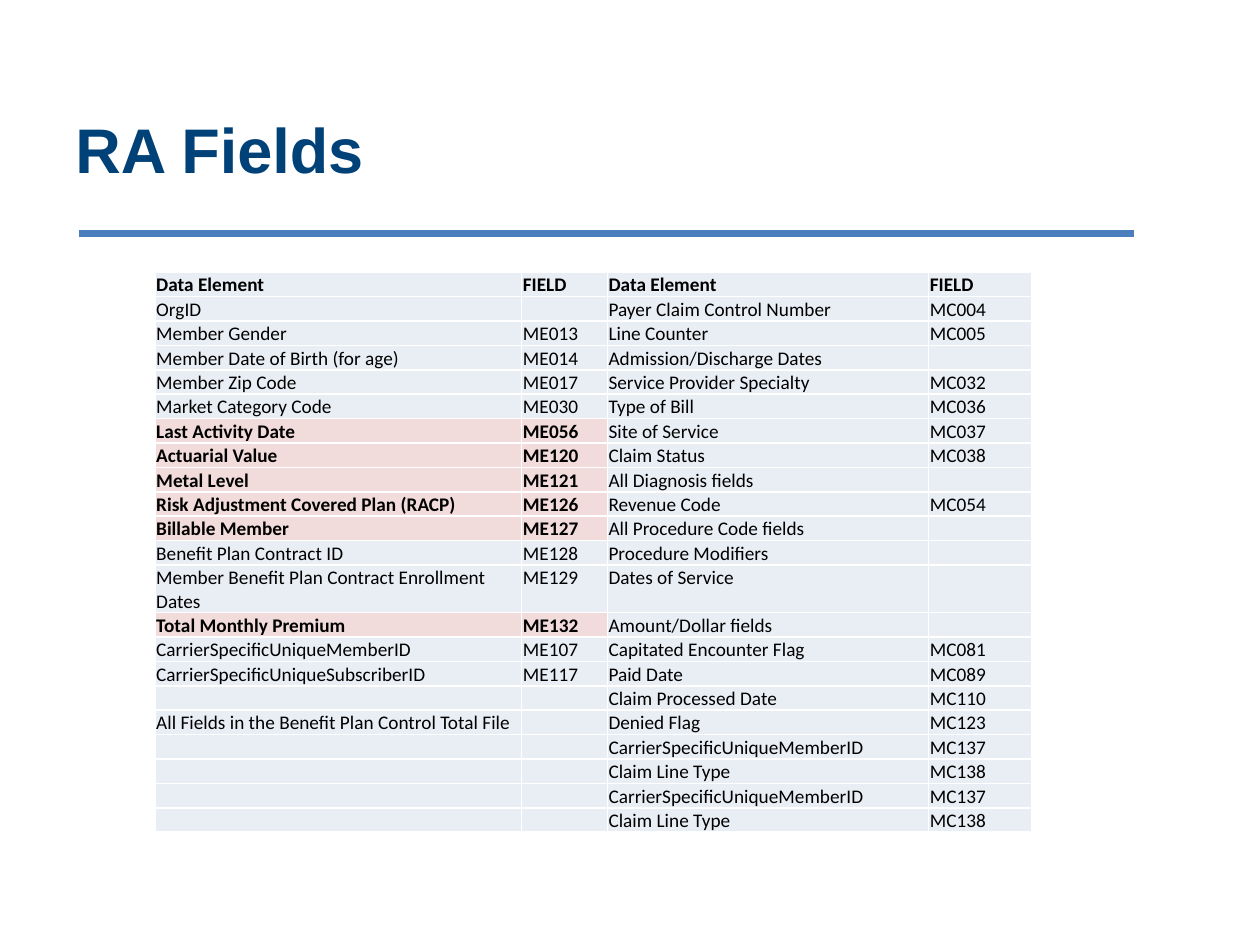
from pptx import Presentation
from pptx.dml.color import RGBColor
from pptx.enum.shapes import MSO_CONNECTOR
from pptx.enum.text import MSO_ANCHOR
from pptx.oxml import parse_xml
from pptx.oxml.ns import nsdecls, qn
from pptx.util import Inches, Pt
from lxml.etree import SubElement

TITLE = "RA Fields"
HEADER = ("Data Element", "FIELD")
MEMBER_FIELDS = [
    ("OrgID", ""),
    ("Member Gender", "ME013"),
    ("Member Date of Birth (for age)", "ME014"),
    ("Member Zip Code", "ME017"),
    ("Market Category Code", "ME030"),
    ("Last Activity Date", "ME056"),
    ("Actuarial Value", "ME120"),
    ("Metal Level", "ME121"),
    ("Risk Adjustment Covered Plan (RACP)", "ME126"),
    ("Billable Member", "ME127"),
    ("Benefit Plan Contract ID", "ME128"),
    ("Member Benefit Plan Contract Enrollment Dates", "ME129"),
    ("Total Monthly Premium", "ME132"),
    ("CarrierSpecificUniqueMemberID", "ME107"),
    ("CarrierSpecificUniqueSubscriberID", "ME117"),
    ("", ""),
    ("All Fields in the Benefit Plan Control Total File", ""),
    ("", ""),
    ("", ""),
    ("", ""),
    ("", ""),
]
CLAIM_FIELDS = [
    ("Payer Claim Control Number", "MC004"),
    ("Line Counter", "MC005"),
    ("Admission/Discharge Dates", ""),
    ("Service Provider Specialty", "MC032"),
    ("Type of Bill", "MC036"),
    ("Site of Service", "MC037"),
    ("Claim Status", "MC038"),
    ("All Diagnosis fields", ""),
    ("Revenue Code", "MC054"),
    ("All Procedure Code fields", ""),
    ("Procedure Modifiers", ""),
    ("Dates of Service", ""),
    ("Amount/Dollar fields", ""),
    ("Capitated Encounter Flag", "MC081"),
    ("Paid Date", "MC089"),
    ("Claim Processed Date", "MC110"),
    ("Denied Flag", "MC123"),
    ("CarrierSpecificUniqueMemberID", "MC137"),
    ("Claim Line Type", "MC138"),
    ("CarrierSpecificUniqueMemberID", "MC137"),
    ("Claim Line Type", "MC138"),
]
HIGHLIGHTED = {"ME056", "ME120", "ME121", "ME126", "ME127", "ME132"}
COLUMN_WIDTHS = (2.91, 0.68, 2.55, 0.82)
ROW_HEIGHT = 0.19
PALE_BLUE, PALE_RED = "E9EDF4", "F2DCDB"


def color(value):
    return RGBColor.from_string(value)


def set_font(font, name, size, value, bold):
    font.name, font.size, font.bold = name, Pt(size), bold
    font.color.rgb = color(value)


def add_borders(cell):
    properties = cell._tc.get_or_add_tcPr()
    for index, side in enumerate(("lnL", "lnR", "lnT", "lnB")):
        properties.insert(index, parse_xml(
            f'<a:{side} {nsdecls("a")} w="12700"><a:solidFill>'
            f'<a:srgbClr val="FFFFFF"/></a:solidFill></a:{side}>'))


def fill_cell(cell, text, fill, bold, anchor):
    cell.margin_left = cell.margin_right = cell.margin_top = Inches(0.01)
    cell.margin_bottom = 0
    cell.vertical_anchor = anchor
    cell.fill.solid()
    cell.fill.fore_color.rgb = color(fill)
    para = cell.text_frame.paragraphs[0]
    para.text = text
    set_font(para.font, "Calibri", 11, "000000", bold)
    if not text:  # keeps an empty cell from stretching its row
        SubElement(para._p, qn("a:endParaRPr")).set("sz", "1100")
    add_borders(cell)


def add_title(page):
    rule = page.shapes.add_connector(
        MSO_CONNECTOR.STRAIGHT, Inches(0.63), Inches(1.85), Inches(9), Inches(1.85))
    rule.line.color.rgb = color("4B7EBC")
    rule.line.width = Pt(4)
    SubElement(rule._element.spPr, qn("a:effectLst"))

    box = page.shapes.add_textbox(Inches(0.5), Inches(0.62), Inches(8.5), Inches(1.11))
    frame = box.text_frame
    frame.word_wrap = True
    frame.vertical_anchor = MSO_ANCHOR.MIDDLE
    para = frame.paragraphs[0]
    para.text = TITLE
    set_font(para.font, "Arial", 36, "004178", True)


def add_field_table(page):
    rows = [HEADER + HEADER]
    rows += [member + claim for member, claim in zip(MEMBER_FIELDS, CLAIM_FIELDS)]
    table = page.shapes.add_table(
        len(rows), len(COLUMN_WIDTHS), Inches(1.23), Inches(2.16),
        Inches(sum(COLUMN_WIDTHS)), Inches(ROW_HEIGHT * len(rows))).table
    table.first_row = table.horz_banding = False
    for column, width in zip(table.columns, COLUMN_WIDTHS):
        column.width = Inches(width)
    for r, values in enumerate(rows):
        table.rows[r].height = Inches(ROW_HEIGHT)
        for c, text in enumerate(values):
            marked = c < 2 and values[1] in HIGHLIGHTED
            fill_cell(table.cell(r, c), text,
                      PALE_RED if marked else PALE_BLUE,
                      marked or r == 0,
                      MSO_ANCHOR.TOP if r else MSO_ANCHOR.BOTTOM)


def main():
    deck = Presentation()
    deck.slide_width, deck.slide_height = Inches(10), Inches(7.5)
    page = deck.slides.add_slide(deck.slide_layouts[6])
    add_title(page)
    add_field_table(page)
    deck.save("out.pptx")


if __name__ == "__main__":
    main()
